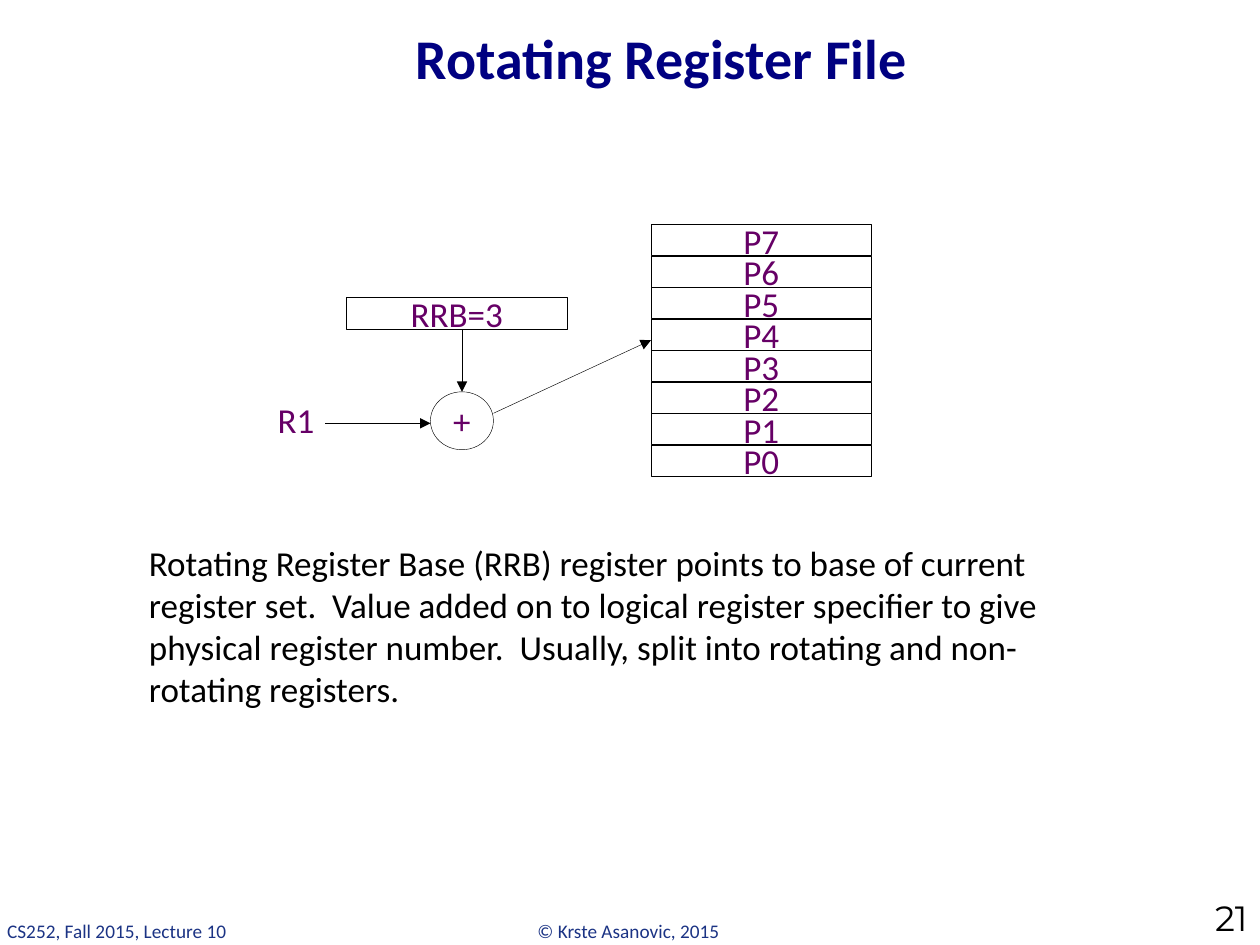
from pptx import Presentation
from pptx.dml.color import RGBColor
from pptx.enum.shapes import MSO_CONNECTOR, MSO_SHAPE
from pptx.enum.text import MSO_ANCHOR, PP_ALIGN
from pptx.oxml.ns import qn
from pptx.util import Inches, Pt
from lxml import etree

RECT, OVAL, STRAIGHT = MSO_SHAPE.RECTANGLE, MSO_SHAPE.OVAL, MSO_CONNECTOR.STRAIGHT
LEFT, CENTER, RIGHT = PP_ALIGN.LEFT, PP_ALIGN.CENTER, PP_ALIGN.RIGHT
TOP, MIDDLE, BOTTOM = MSO_ANCHOR.TOP, MSO_ANCHOR.MIDDLE, MSO_ANCHOR.BOTTOM

COLORS = {"title": "000081", "footer": "1B3384", "label": "660066",
          "ink": "000000", "paper": "FFFFFF"}

deck = Presentation()
deck.slide_width, deck.slide_height = Inches(10), Inches(7.5)
COL, ROW = deck.slide_width / 120, deck.slide_height / 30
HAIRLINE = Pt(0.25)
slide = deck.slides.add_slide(deck.slide_layouts[6])


def write(holder, text, color, size=20, align=CENTER, anchor=MIDDLE, wrap=True,
          face="Calibri", bold=False):
    frame = holder.text_frame
    frame.text = text
    paragraph = frame.paragraphs[0]
    font = paragraph.font
    font.color.rgb = RGBColor.from_string(COLORS[color])
    formats = [
        (frame, {"word_wrap": wrap, "vertical_anchor": anchor}),
        (paragraph, {"alignment": align}),
        (font, {"size": Pt(size), "name": face, "bold": bold}),
    ]
    for target, values in formats:
        for key, value in values.items():
            setattr(target, key, value)


def place(col, row, cols, rows):
    return [round(v) for v in (col * COL, row * ROW, cols * COL, rows * ROW)]


texts = [
    ("© Krste Asanovic, 2015", (50, 29, 20, 1.16),
     {"color": "footer", "size": 11, "align": LEFT, "anchor": TOP, "wrap": False}),
    ("CS252, Fall 2015, Lecture 10", (-0.5, 29, 23.5, 1.16),
     {"color": "footer", "size": 11, "align": LEFT, "anchor": TOP, "wrap": False}),
    ("Rotating Register File", (16, 0.32, 94, 3),
     {"color": "title", "size": 32, "bold": True}),
    ("21", (109, 28.96, 11, 1.04),
     {"color": "ink", "align": RIGHT, "anchor": BOTTOM, "face": "Montserrat"}),
    ("R1", (25.2, 12.44, 6, 1.76),
     {"color": "label", "anchor": TOP, "wrap": False}),
    ("Rotating Register Base (RRB) register points to base of current register set.  "
     "Value added on to logical register specifier to give physical register number.  "
     "Usually, split into rotating and non-rotating registers.", (13, 17, 91, 5.8),
     {"color": "ink", "align": LEFT, "anchor": TOP}),
]
for text, cell, style in texts:
    write(slide.shapes.add_textbox(*place(*cell)), text, **style)

registers = 8
blocks = [(RECT, f"P{n}", (62, 7.12 + registers - 1 - n, 21, 1)) for n in range(registers)]
blocks += [(RECT, "RRB=3", (33, 9.44, 21, 1)), (OVAL, "+", (41, 12.44, 6, 1.84))]
for outline, label, cell in blocks:
    block = slide.shapes.add_shape(outline, *place(*cell))
    block.shadow.inherit = False
    block.fill.solid()
    block.fill.fore_color.rgb = RGBColor.from_string(COLORS["paper"])
    block.line.color.rgb = RGBColor.from_string(COLORS["ink"])
    block.line.width = HAIRLINE
    write(block, label, "label")

arrows = [(44, 10.44, 44, 12.44), (31, 13.44, 41, 13.44), (47, 13.12, 62, 10.8)]
for ends in arrows:
    arrow = slide.shapes.add_connector(STRAIGHT, *place(*ends))
    arrow.line.color.rgb = RGBColor.from_string(COLORS["ink"])
    arrow.line.width = HAIRLINE
    properties = arrow.line._get_or_add_ln()
    etree.SubElement(properties, qn("a:tailEnd"), type="triangle")
    etree.SubElement(properties.getparent(), qn("a:effectLst"))

deck.save("out.pptx")
